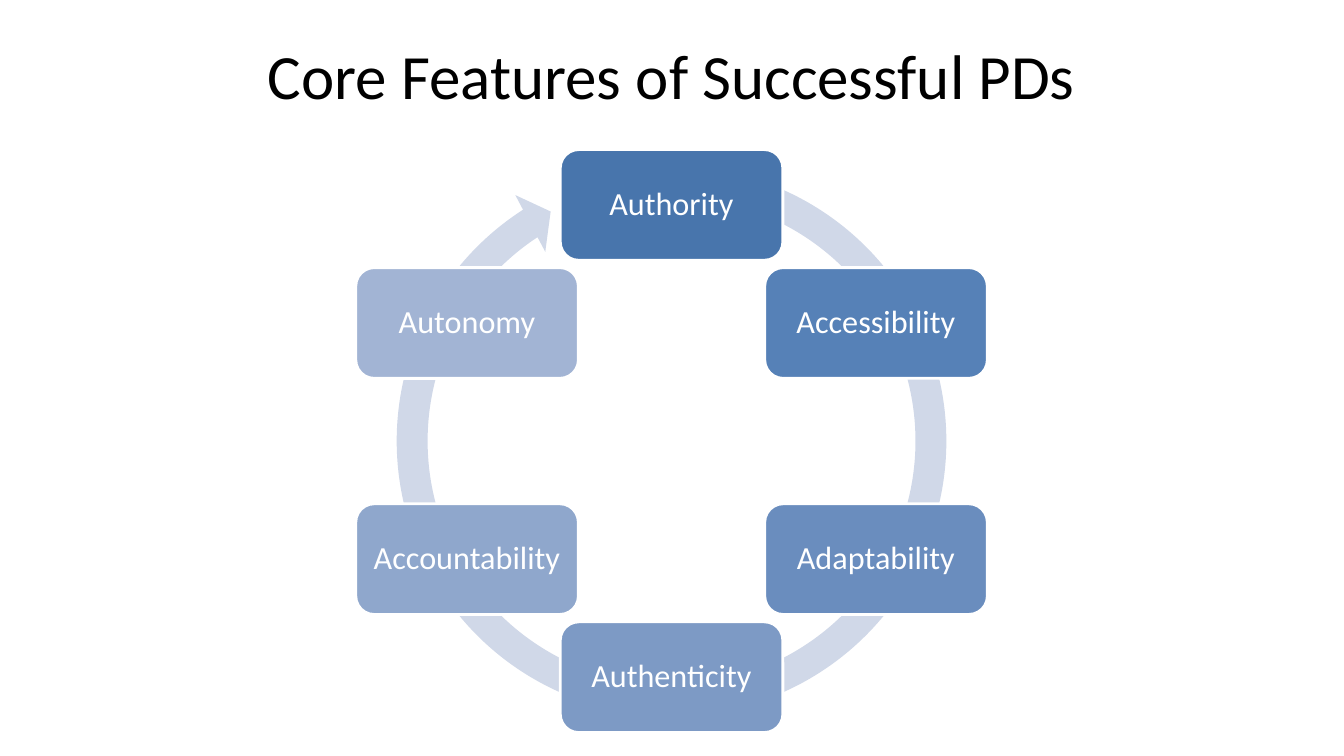
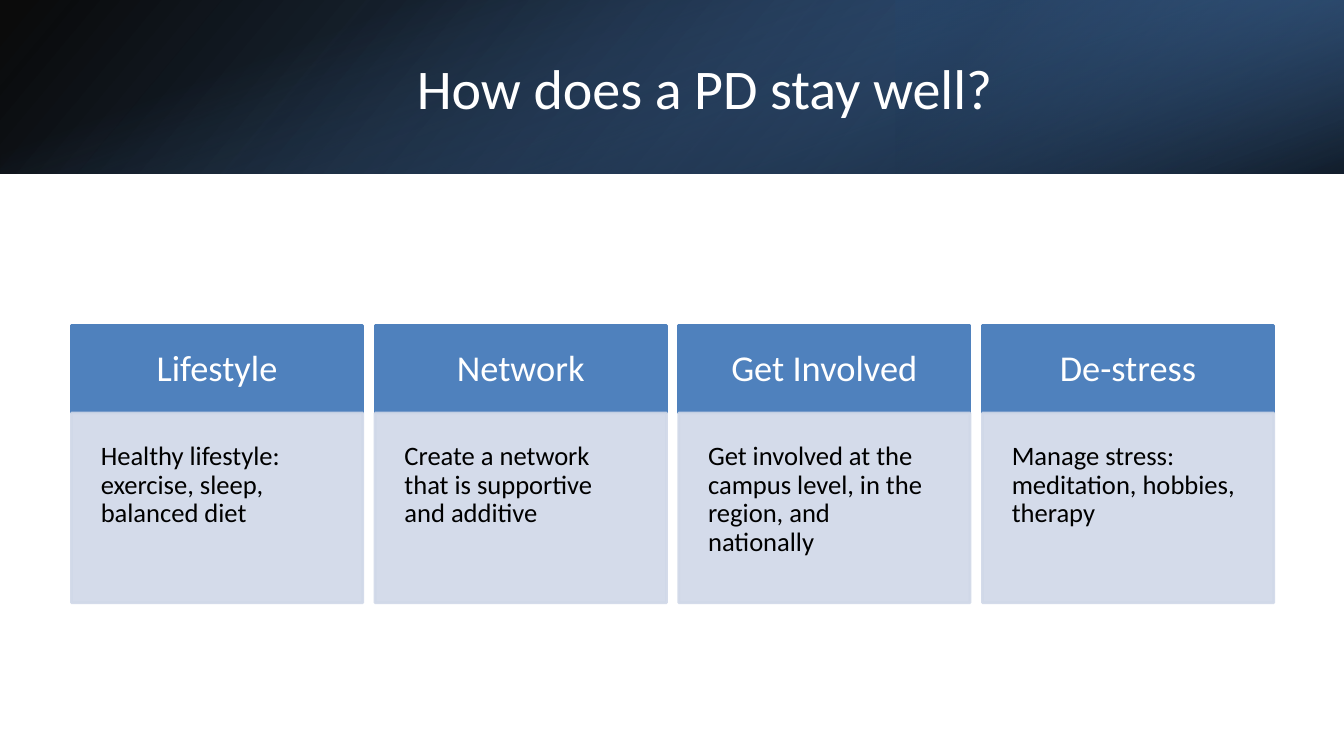
import math
import pptx
import pptx.util
import pptx.dml.color
import pptx.enum.shapes
import pptx.enum.text
import pptx.oxml
import pptx.oxml.ns

Cm, Pt = pptx.util.Cm, pptx.util.Pt
RGB = pptx.dml.color.RGBColor
SHAPE = pptx.enum.shapes.MSO_SHAPE
ALIGN = pptx.enum.text.PP_ALIGN
ANCHOR = pptx.enum.text.MSO_ANCHOR
qn = pptx.oxml.ns.qn

# Shared look
FONT = "Calibri"
WIDTH, HEIGHT = 33.87, 19.05
BLACK = RGB(0x00, 0x00, 0x00)
WHITE = RGB(0xFF, 0xFF, 0xFF)
BLUE = RGB(0x4F, 0x81, 0xBD)
DEEP = RGB(0x37, 0x60, 0x92)
NAVY = RGB(0x25, 0x40, 0x61)
PALE = RGB(0xD0, 0xD8, 0xE8)

# Label and fill of each node, clockwise from the top
NODES = [
    ("Authority", RGB(0x48, 0x75, 0xAC)),
    ("Accessibility", RGB(0x56, 0x81, 0xB7)),
    ("Adaptability", RGB(0x6A, 0x8D, 0xBE)),
    ("Authenticity", RGB(0x7D, 0x9A, 0xC5)),
    ("Accountability", RGB(0x8F, 0xA7, 0xCC)),
    ("Autonomy", RGB(0xA2, 0xB4, 0xD4)),
]
CARDS = [
    ("Lifestyle", "Healthy lifestyle: exercise, sleep, balanced diet"),
    ("Network", "Create a network that is supportive and additive"),
    ("Get Involved", "Get involved at the campus level, in the region, and nationally"),
    ("De-stress", "Manage stress: meditation, hobbies, therapy"),
]


def add_shape(slide, kind, box, fill=None, line=None):
    shape = slide.shapes.add_shape(kind, *map(Cm, box))
    shape.shadow.inherit = False
    if fill is not None:
        shape.fill.solid()
        shape.fill.fore_color.rgb = fill
    if line is None:
        shape.line.fill.background()
    else:
        shape.line.color.rgb = line
        shape.line.width = Pt(2)
    return shape


def write(shape, text, size, color, align=ALIGN.CENTER, anchor=ANCHOR.MIDDLE):
    frame = shape.text_frame
    frame.text = text
    frame.word_wrap = True
    frame.auto_size = pptx.enum.text.MSO_AUTO_SIZE.NONE
    frame.vertical_anchor = anchor
    para = frame.paragraphs[0]
    para.alignment = align
    para.font.name = FONT
    para.font.size = Pt(size)
    para.font.color.rgb = color
    return frame


def write_label(shape, text, size, color, inset, **place):
    frame = write(shape, text, size, color, **place)
    frame.margin_left = frame.margin_right = Cm(inset)
    frame.margin_top = frame.margin_bottom = Cm(inset)
    frame.paragraphs[0].line_spacing = 0.9


def add_slide(deck, title, box, size, color):
    slide = deck.slides.add_slide(deck.slide_layouts[5])
    head = slide.shapes.title
    head.left, head.top, head.width, head.height = map(Cm, box)
    write(head, title, size, color)
    return slide


def fade(shape, percent):
    """Make the fill and line of a shape partly transparent."""
    for color in shape._element.spPr.iter(qn("a:srgbClr")):
        pptx.oxml.ns.qn("a:alpha")
        color.append(pptx.oxml.parse_xml(
            f'<a:alpha {pptx.oxml.ns.nsdecls("a")} val="{percent * 1000}"/>'))


def add_blend(slide, box, stops, angle, turn=0, flip=False):
    """Add a rectangle with a gradient; stops are (place, colour, opacity)."""
    shape = add_shape(slide, SHAPE.RECTANGLE, box, BLUE)
    shape.rotation = turn
    props = shape._element.spPr
    if flip:
        props.find(qn("a:xfrm")).set("flipH", "1")
    marks = "".join(
        f'<a:gs pos="{place * 1000}"><a:srgbClr val="{color}">'
        f'<a:alpha val="{alpha * 1000}"/></a:srgbClr></a:gs>'
        for place, color, alpha in stops)
    blend = pptx.oxml.parse_xml(
        f'<a:gradFill {pptx.oxml.ns.nsdecls("a")} rotWithShape="1">'
        f'<a:gsLst>{marks}</a:gsLst>'
        f'<a:lin ang="{angle * 60000}" scaled="0"/></a:gradFill>')
    props.replace(props.find(qn("a:solidFill")), blend)


def draw_band(slide, box):
    left, top, width, height = box
    add_blend(slide, box, [(0, BLACK, 96), (100, DEEP, 100)], 140, flip=True)
    third = width / 3
    add_blend(slide, (left + width - third, top, third, height),
              [(19, NAVY, 68), (100, BLUE, 79)], 320, turn=180, flip=True)
    # An upright strip, turned to lie over the whole band
    shift = (width - height) / 2
    add_blend(slide, (left + shift, top - shift, height, width),
              [(23, BLUE, 0), (99, BLACK, 74)], 340, turn=90)
    # Keep the title in front of the band
    slide.shapes._spTree.append(slide.shapes.title._element)


def draw_cycle(slide, box):
    left, top, width, height = box
    ring = add_shape(slide, SHAPE.CIRCULAR_ARROW, box, PALE)
    for i, value in enumerate((0.053, 3.126, 142.205, 171.315, 0.055)):
        ring.adjustments[i] = value
    # Nodes at equal angles; the outer ones touch the box
    wide, high = 5.61, 2.79
    radius = (height - high) / 2
    for i, (label, fill) in enumerate(NODES):
        angle = math.tau * i / len(NODES)
        x = left + width / 2 + radius * math.sin(angle) - wide / 2
        y = top + height / 2 - radius * math.cos(angle) - high / 2
        node = add_shape(slide, SHAPE.ROUNDED_RECTANGLE,
                         (x, y, wide, high), fill, WHITE)
        write_label(node, label, 23, WHITE, 0.25)


def draw_cards(slide, box):
    left, top, width, height = box
    gap, head = 0.31, 2.21
    wide = (width - gap * (len(CARDS) - 1)) / len(CARDS)
    for i, (name, text) in enumerate(CARDS):
        x = left + i * (wide + gap)
        cap = add_shape(slide, SHAPE.RECTANGLE, (x, top, wide, head), BLUE, BLUE)
        write_label(cap, name, 26, WHITE, 0.58)
        body = add_shape(slide, SHAPE.RECTANGLE,
                         (x, top + head, wide, height - head), PALE, PALE)
        fade(body, 90)
        write_label(body, text, 19, BLACK, 0.74,
                    align=ALIGN.LEFT, anchor=ANCHOR.TOP)


def main():
    deck = pptx.Presentation()
    deck.slide_width, deck.slide_height = Cm(WIDTH), Cm(HEIGHT)

    # Core features
    slide = add_slide(deck, "Core Features of Successful PDs",
                      (5.97, 0.3, 21.9, 3.15), 45, BLACK)
    draw_cycle(slide, (9.58, 3.77, 14.69, 14.69))

    # Staying well
    slide = add_slide(deck, "How does a PD stay well?",
                      (3.81, 0.97, 27.89, 2.44), 40, WHITE)
    draw_band(slide, (0, 0, WIDTH, 4.38))
    draw_cards(slide, (1.8, 8.2, 30.3, 6.99))

    deck.save("out.pptx")


if __name__ == "__main__":
    main()
